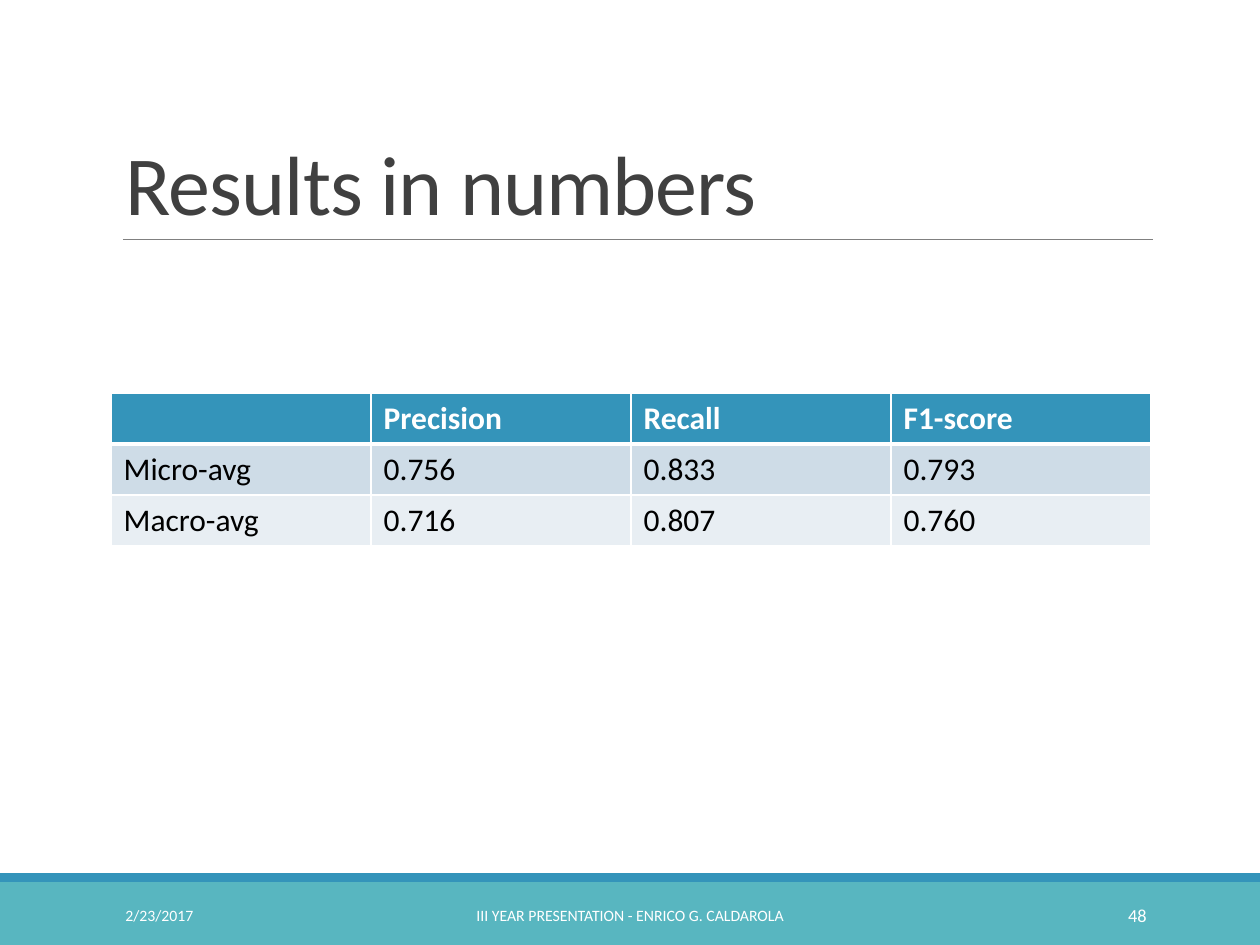
from pptx import Presentation
from pptx.dml.color import RGBColor
from pptx.enum.shapes import MSO_CONNECTOR, MSO_SHAPE
from pptx.enum.text import MSO_ANCHOR as Anchor, PP_ALIGN as Align
from pptx.oxml import parse_xml
from pptx.oxml.ns import nsdecls
from pptx.util import Pt

EMU_PER_PX = 914400 / 126
FONT = "Calibri"
WHITE = RGBColor(0xFF, 0xFF, 0xFF)
BLACK = RGBColor(0x00, 0x00, 0x00)
CHARCOAL = RGBColor(0x40, 0x40, 0x40)
GRAY = RGBColor(0x80, 0x80, 0x80)
BLUE = RGBColor(0x34, 0x94, 0xBA)
TEAL = RGBColor(0x58, 0xB6, 0xC0)
BAND_DARK = RGBColor(0xCE, 0xDC, 0xE7)
BAND_LIGHT = RGBColor(0xE8, 0xEE, 0xF3)

SCORES = [
    ["", "Precision", "Recall", "F1-score"],
    ["Micro-avg", "0.756", "0.833", "0.793"],
    ["Macro-avg", "0.716", "0.807", "0.760"],
]
ROW_FILLS = [BLUE, BAND_DARK, BAND_LIGHT]
COLUMN_WIDTH, ROW_HEIGHT = 260, 51
FOOTER_TOP, FOOTER_HEIGHT = 890, 50


def px(length):
    """Turn pixels into EMU."""
    return round(length * EMU_PER_PX)


def style_run(run, size, color, bold=False):
    """Set the font of a run."""
    run.font.name = FONT
    run.font.size = Pt(size)
    run.font.bold = bold
    run.font.color.rgb = color


def add_band(slide, top, height, color):
    """Add a full-width footer band."""
    band = slide.shapes.add_shape(MSO_SHAPE.RECTANGLE, 0, px(top), px(1260), px(height))
    band.shadow.inherit = False
    band.fill.solid()
    band.fill.fore_color.rgb = color
    band.line.fill.background()


def add_rule(slide, left, right, y):
    """Add the thin rule under the title."""
    rule = slide.shapes.add_connector(MSO_CONNECTOR.STRAIGHT, px(left), px(y), px(right), px(y))
    rule.line.color.rgb = GRAY
    rule.line.width = Pt(0.5)
    rule._element.spPr.append(parse_xml(f"<a:effectLst {nsdecls('a')}/>"))


def add_text(slide, box, text, size, color, align=Align.LEFT, anchor=Anchor.MIDDLE):
    """Add a one-line text box and return its paragraph."""
    frame = slide.shapes.add_textbox(*map(px, box)).text_frame
    frame.word_wrap = True
    frame.vertical_anchor = anchor
    paragraph = frame.paragraphs[0]
    paragraph.text = text
    paragraph.alignment = align
    style_run(paragraph.runs[0], size, color)
    return paragraph


def add_title(slide, text):
    """Add the tightly spaced slide title."""
    title = add_text(slide, (113, 39, 1040, 200), text, 48, CHARCOAL, anchor=Anchor.BOTTOM)
    title.line_spacing = 0.85
    title.runs[0].font._element.set("spc", "-50")


def set_borders(cell, bottom_width):
    """Give a cell white borders."""
    properties = cell._tc.get_or_add_tcPr()
    widths = {"lnL": 1, "lnR": 1, "lnT": 1, "lnB": bottom_width}
    for position, (side, width) in enumerate(widths.items()):
        properties.insert(position, parse_xml(
            f'<a:{side} {nsdecls("a")} w="{Pt(width)}"><a:solidFill>'
            f'<a:srgbClr val="{WHITE}"/></a:solidFill></a:{side}>'))


def add_score_table(slide, left, top):
    """Add the table of averaged scores."""
    rows, columns = len(SCORES), len(SCORES[0])
    table = slide.shapes.add_table(
        rows, columns, px(left), px(top),
        px(columns * COLUMN_WIDTH), px(rows * ROW_HEIGHT)).table
    for row_index, (row, fill) in enumerate(zip(SCORES, ROW_FILLS)):
        is_header = row_index == 0
        for column_index, text in enumerate(row):
            cell = table.cell(row_index, column_index)
            cell.fill.solid()
            cell.fill.fore_color.rgb = fill
            set_borders(cell, 3 if is_header else 1)
            if text:
                cell.text_frame.text = text
                style_run(cell.text_frame.paragraphs[0].runs[0], 18,
                          WHITE if is_header else BLACK, is_header)


def add_footer(slide):
    """Add the date, the talk name and the slide number."""
    for left, width, text, size, align in [
        (113, 256, "2/23/2017", 9, Align.LEFT),
        (380, 500, "III YEAR PRESENTATION - ENRICO G. CALDAROLA", 9, Align.CENTER),
        (1023, 136, "48", 10.5, Align.RIGHT),
    ]:
        add_text(slide, (left, FOOTER_TOP, width, FOOTER_HEIGHT), text, size, WHITE, align)


def main():
    """Build and save the slide."""
    presentation = Presentation()
    presentation.slide_width = px(1260)
    presentation.slide_height = px(945)
    slide = presentation.slides.add_slide(presentation.slide_layouts[6])
    add_band(slide, 882, 63, TEAL)
    add_band(slide, 873, 9, BLUE)
    add_rule(slide, 123, 1153, 239)
    add_title(slide, "Results in numbers")
    add_score_table(slide, 111, 393)
    add_footer(slide)
    presentation.save("out.pptx")


if __name__ == "__main__":
    main()
